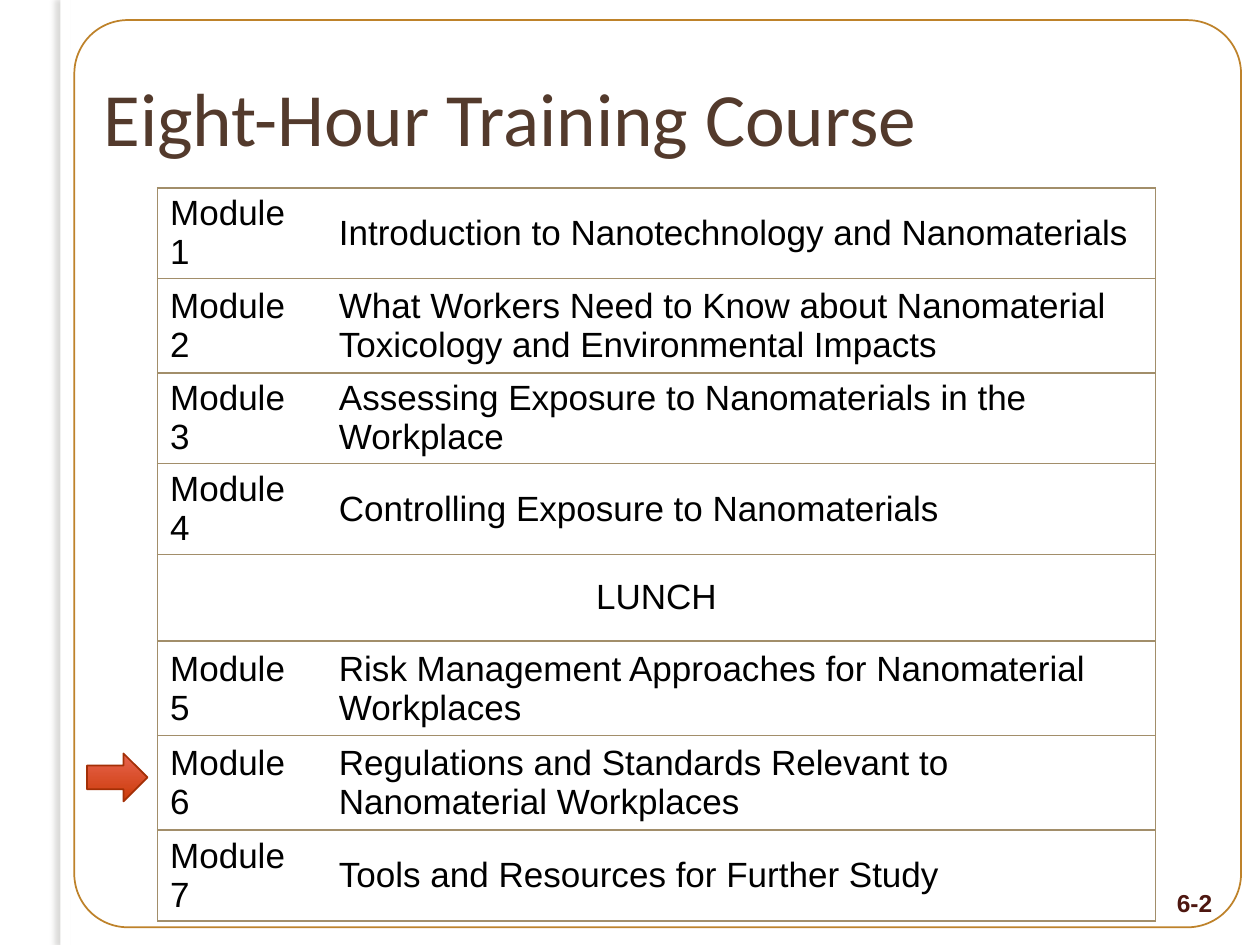
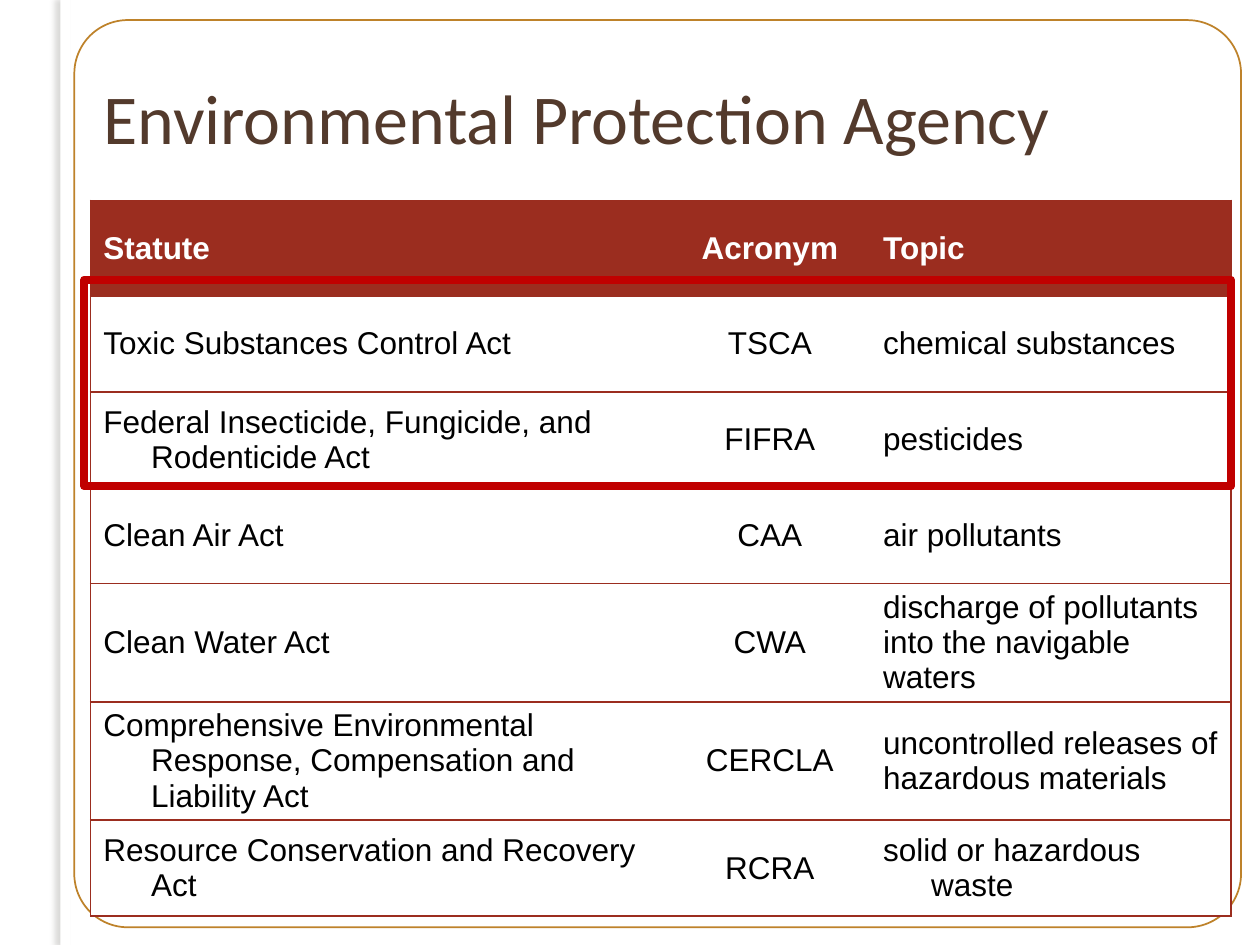
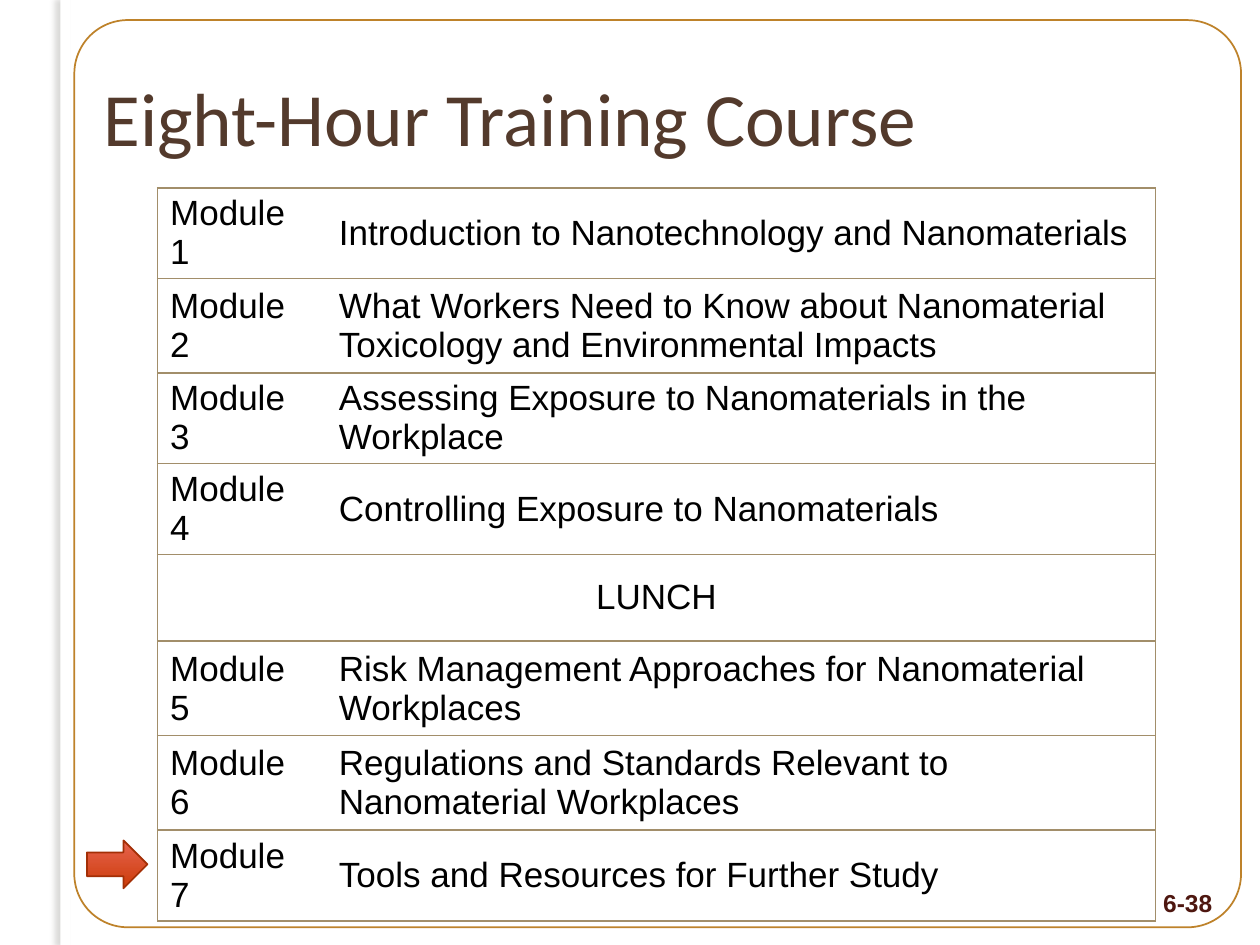
from lxml import etree
from pptx import Presentation
from pptx import util as u
from pptx.dml.color import RGBColor
from pptx.enum import shapes, text
from pptx.oxml import ns

Inches, Pt = u.Inches, u.Pt

WHITE = RGBColor(0xFF, 0xFF, 0xFF)
BLACK = RGBColor(0, 0, 0)
TITLE_BROWN = RGBColor(0x53, 0x3A, 0x2C)
NUMBER_BROWN = RGBColor(0x4E, 0x17, 0x10)
FRAME_GOLD = RGBColor(0xB7, 0x75, 0x13)
SHADOW_GREY = RGBColor(0x74, 0x72, 0x6D)
RULE_TAN = RGBColor(0xA2, 0x8E, 0x6A)
STATUTE_RED = RGBColor(0x9B, 0x2D, 0x1F)
HIGHLIGHT_RED = RGBColor(0xC0, 0, 0)
ARROW_TOP = RGBColor(0xE7, 0x64, 0x50)
ARROW_BOTTOM = RGBColor(0xCC, 0x3B, 0x08)
ARROW_LINE = RGBColor(0xA3, 0x2F, 0x06)

MODULE_FONT = {"name": "Arial", "size": Pt(20), "bold": False}
STATUTE_FONT = {"name": "Arial", "size": Pt(18), "bold": False}
NUMBER_FONT = {"name": "Arial", "size": Pt(14), "bold": True}
TITLE_FONT = {"name": "Calibri", "bold": False}

TITLE_BOX = (0.72, 0.3, 9.05, 1.25)
COURSE_BOX = (1.25, 1.49)
STATUTE_BOX = (0.72, 1.59)
HANGING = (0.38, -0.38)
TOPIC_FLUSH = (0.13, 0)
TOPIC_HANGING = (0.51, -0.38)

COURSE = [
    ("Module 1", "Introduction to Nanotechnology and Nanomaterials"),
    ("Module 2", "What Workers Need to Know about Nanomaterial Toxicology and Environmental Impacts"),
    ("Module 3", "Assessing Exposure to Nanomaterials in the Workplace"),
    ("Module 4", "Controlling Exposure to Nanomaterials"),
    ("LUNCH",),
    ("Module 5", "Risk Management Approaches for Nanomaterial Workplaces"),
    ("Module 6", "Regulations and Standards Relevant to Nanomaterial Workplaces"),
    ("Module 7", "Tools and Resources for Further Study"),
]
COURSE_COLS = [1.34, 6.58]
COURSE_ROWS = [0.72, 0.75, 0.72, 0.72, 0.69, 0.75, 0.75, 0.72]

STATUTES = [
    ("Statute", "Acronym", "Topic", TOPIC_HANGING),
    ("Toxic Substances Control Act", "TSCA", "chemical substances", TOPIC_FLUSH),
    ("Federal Insecticide, Fungicide, and Rodenticide Act", "FIFRA", "pesticides", TOPIC_HANGING),
    ("Clean Air Act", "CAA", "air pollutants", TOPIC_HANGING),
    ("Clean Water Act", "CWA", "discharge of pollutants into the navigable waters", TOPIC_FLUSH),
    ("Comprehensive Environmental Response, Compensation and Liability Act", "CERCLA",
     "uncontrolled releases of hazardous materials", TOPIC_FLUSH),
    ("Resource Conservation and Recovery Act", "RCRA", "solid or hazardous waste", TOPIC_HANGING),
]
STATUTE_COLS = [4.72, 1.34, 2.99]
STATUTE_ROWS = [0.76] * len(STATUTES)


# Shared helpers
def format_font(font, values, color):
    for key, value in values.items():
        setattr(font, key, value)
    font.color.rgb = color


def add_outline(slide, kind, box, color, width, alpha=100):
    """Add an unfilled shape with a coloured line."""
    outline = slide.shapes.add_shape(kind, *map(Inches, box))
    outline.shadow.inherit = False
    outline.fill.background()
    outline.line.color.rgb = color
    outline.line.width = Pt(width)
    if alpha < 100:
        line_color = outline.line.fill._xPr.find(".//" + ns.qn("a:srgbClr"))
        etree.SubElement(line_color, ns.qn("a:alpha"), val=str(alpha * 1000))
    return outline


def set_borders(cell, color, sides):
    """Draw 1 pt borders on the given sides and clear the others."""
    cell_props = cell._tc.get_or_add_tcPr()
    for index, side in enumerate("LRTB"):
        tag = ns.qn("a:ln" + side)
        for previous in cell_props.findall(tag):
            cell_props.remove(previous)
        border = etree.Element(tag, w=str(Pt(1)))
        if side in sides:
            solid = etree.SubElement(border, ns.qn("a:solidFill"))
            etree.SubElement(solid, ns.qn("a:srgbClr"), val=str(color))
        else:
            etree.SubElement(border, ns.qn("a:noFill"))
        cell_props.insert(index, border)


def add_ruled_table(slide, origin, cols, rows, rule_color, padding=0.05):
    """Add a white table with an outer frame and lines between rows."""
    left, top = origin
    frame = slide.shapes.add_table(len(rows), len(cols), *map(
        Inches, (left, top, sum(cols), sum(rows))))
    table = frame.table
    table.first_row = table.horz_banding = False
    for column, width in zip(table.columns, cols):
        column.width = Inches(width)
    for row, height in zip(table.rows, rows):
        row.height = Inches(height)
        for index, cell in enumerate(row.cells):
            sides = "TB" + "L" * (index == 0) + "R" * (index == len(cols) - 1)
            cell.margin_top = cell.margin_bottom = Inches(padding)
            cell.fill.solid()
            cell.fill.fore_color.rgb = WHITE
            set_borders(cell, rule_color, sides)
    return table


def fill_cell(cell, words, font, color, centred=False, indent=None):
    cell.vertical_anchor = text.MSO_ANCHOR.MIDDLE
    paragraph = cell.text_frame.paragraphs[0]
    paragraph.alignment = text.PP_ALIGN.CENTER if centred else text.PP_ALIGN.LEFT
    if indent:
        props = paragraph._p.get_or_add_pPr()
        for key, value in zip(("marL", "indent"), indent):
            props.set(key, str(Inches(value)))
    run = paragraph.add_run()
    run.text = words
    format_font(run.font, font, color)


# Page furniture
def add_side_band(slide):
    band = slide.shapes.add_shape(shapes.MSO_SHAPE.RECTANGLE, *map(Inches, (0.48, 0, 0.08, 7.5)))
    band.fill.solid()
    band.fill.fore_color.rgb = WHITE
    band.line.fill.background()
    band.shadow.inherit = False
    effects = band._element.spPr.find(ns.qn("a:effectLst"))
    shadow = etree.SubElement(effects, ns.qn("a:outerShdw"), blurRad=str(Pt(3)),
                              dist=str(Pt(3)), dir="10800000", rotWithShape="0")
    tint = etree.SubElement(shadow, ns.qn("a:srgbClr"), val=str(SHADOW_GREY))
    etree.SubElement(tint, ns.qn("a:alpha"), val="25000")


def add_page_number(slide, number):
    box = slide.shapes.add_textbox(*map(Inches, (9.02, 7, 0.7, 0.29)))
    box.text_frame.word_wrap = True
    paragraph = box.text_frame.paragraphs[0]
    paragraph.alignment = text.PP_ALIGN.RIGHT
    run = paragraph.add_run()
    run.text = number
    format_font(run.font, NUMBER_FONT, NUMBER_BROWN)


def add_page(prs, heading, heading_size):
    """Start a slide with side band, rounded frame and title."""
    slide = prs.slides.add_slide(prs.slide_layouts[5])
    add_side_band(slide)
    frame = add_outline(slide, shapes.MSO_SHAPE.ROUNDED_RECTANGLE,
                        (0.59, 0.16, 9.26, 7.2), FRAME_GOLD, 1, alpha=90)
    frame.adjustments[0] = 0.059

    title = slide.shapes.title
    title.left, title.top, title.width, title.height = map(Inches, TITLE_BOX)
    title.text_frame.vertical_anchor = text.MSO_ANCHOR.MIDDLE
    paragraph = title.text_frame.paragraphs[0]
    paragraph.alignment = text.PP_ALIGN.LEFT
    run = paragraph.add_run()
    run.text = heading
    format_font(run.font, {**TITLE_FONT, "size": Pt(heading_size)}, TITLE_BROWN)
    return slide


# Course overview with an arrow at the current module
def add_module_arrow(slide, left, top):
    arrow = slide.shapes.add_shape(shapes.MSO_SHAPE.RIGHT_ARROW,
                                   *map(Inches, (left, top, 0.48, 0.38)))
    arrow.shadow.inherit = False
    arrow.fill.gradient()
    arrow.fill.gradient_angle = 270
    for stop, color in zip(arrow.fill.gradient_stops, (ARROW_TOP, ARROW_BOTTOM)):
        stop.color.rgb = color
    arrow.line.color.rgb = ARROW_LINE
    arrow.line.width = Pt(1)


def add_course_slide(prs, number, arrow_drop):
    slide = add_page(prs, "Eight-Hour Training Course", 43)
    add_page_number(slide, number)
    table = add_ruled_table(slide, COURSE_BOX, COURSE_COLS, COURSE_ROWS, RULE_TAN, padding=0.02)
    for row, entry in enumerate(COURSE):
        is_break = len(entry) == 1
        if is_break:
            table.cell(row, 0).merge(table.cell(row, 1))
            set_borders(table.cell(row, 0), RULE_TAN, "LRTB")
        for col, words in enumerate(entry):
            fill_cell(table.cell(row, col), words, MODULE_FONT, BLACK, centred=is_break)
    left, top = COURSE_BOX
    add_module_arrow(slide, left - 0.56, top + arrow_drop)


# Statutes of the agency, with the two main ones outlined
def add_statute_slide(prs):
    slide = add_page(prs, "Environmental Protection Agency", 40)
    table = add_ruled_table(slide, STATUTE_BOX, STATUTE_COLS, STATUTE_ROWS, STATUTE_RED)
    for row, (statute, acronym, topic, topic_indent) in enumerate(STATUTES):
        is_header = row == 0
        font = {**STATUTE_FONT, "bold": is_header}
        color = WHITE if is_header else BLACK
        indents = (HANGING, HANGING, topic_indent)
        for col, words in enumerate((statute, acronym, topic)):
            cell = table.cell(row, col)
            if is_header:
                cell.fill.fore_color.rgb = STATUTE_RED
            fill_cell(cell, words, font, color, centred=col == 1, indent=indents[col])
    left, top = STATUTE_BOX
    add_outline(slide, shapes.MSO_SHAPE.RECTANGLE,
                (left - 0.05, top + 0.63, 9.1, 1.64), HIGHLIGHT_RED, 4.5)


def main():
    prs = Presentation()
    prs.slide_width, prs.slide_height = Inches(10), Inches(7.5)
    add_course_slide(prs, "6-2", arrow_drop=4.49)
    add_statute_slide(prs)
    add_course_slide(prs, "6-38", arrow_drop=5.18)
    prs.save("out.pptx")


if __name__ == "__main__":
    main()
